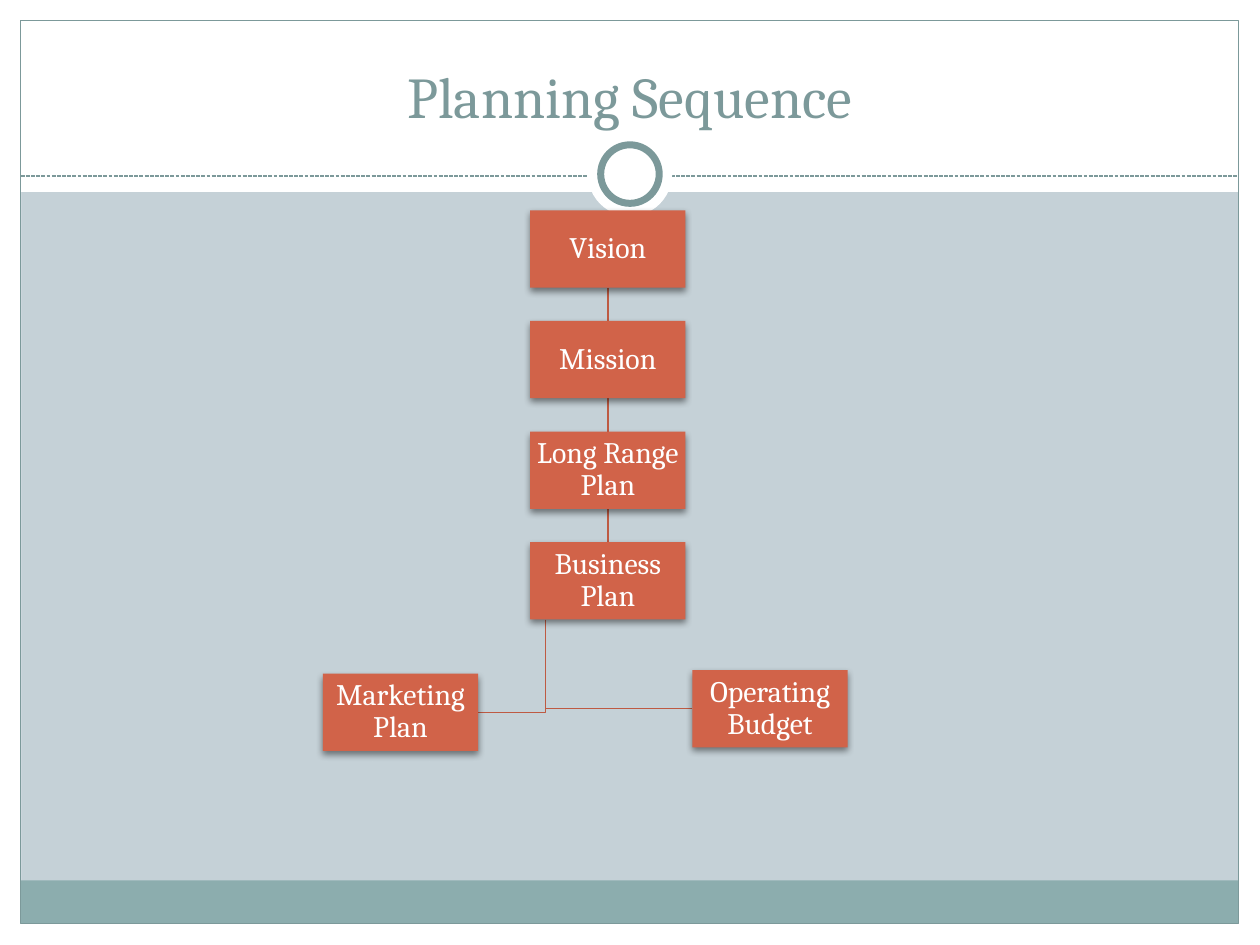
"""Build the Planning Sequence slide: a vertical chain of plans with two branches."""
from dataclasses import dataclass

from lxml import etree
from pptx import Presentation
from pptx.dml.color import RGBColor
from pptx.enum import dml, shapes, text
from pptx.oxml import ns
from pptx.util import Cm, Pt


@dataclass(frozen=True)
class Theme:
    backdrop: RGBColor = RGBColor(0xC5, 0xD1, 0xD7)
    paper: RGBColor = RGBColor(0xFF, 0xFF, 0xFF)
    band: RGBColor = RGBColor(0x8C, 0xAD, 0xAE)
    accent: RGBColor = RGBColor(0x7C, 0x99, 0x9A)
    box: RGBColor = RGBColor(0xD1, 0x63, 0x49)
    link: RGBColor = RGBColor(0xBE, 0x5A, 0x42)
    font: str = "Cambria"
    title_size: Pt = Pt(33)
    box_size: Pt = Pt(17)
    hairline: Pt = Pt(0.75)
    ring: Pt = Pt(4)


theme = Theme()
deck = Presentation()
deck.slide_width, deck.slide_height = Cm(25.4), Cm(19.05)
page = deck.slides.add_slide(deck.slide_layouts[5])
page.background.fill.solid()
page.background.fill.fore_color.rgb = theme.backdrop


def add_block(kind, bounds, fill=None, line=None, width=theme.hairline):
    block = page.shapes.add_shape(kind, *map(Cm, bounds))
    block.shadow.inherit = False
    if fill is None:
        block.fill.background()
    else:
        block.fill.solid()
        block.fill.fore_color.rgb = fill
    if line is None:
        block.line.fill.background()
    else:
        block.line.color.rgb = line
        block.line.width = width
    return block


def add_line(start, end, color):
    line = page.shapes.add_connector(shapes.MSO_CONNECTOR.STRAIGHT, *map(Cm, start + end))
    line.line.color.rgb = color
    line.line.width = theme.hairline
    etree.SubElement(line.element.spPr, ns.qn("a:effectLst"))
    return line


rectangle, oval = shapes.MSO_SHAPE.RECTANGLE, shapes.MSO_SHAPE.OVAL
for bounds in ((0, 18.62, 25.4, 0.43), (0, 0, 25.4, 3.87),
               (0, 0, 0.43, 19.05), (24.97, 0, 0.43, 19.05)):
    add_block(rectangle, bounds, theme.paper)
add_block(rectangle, (0.42, 17.75, 24.54, 0.87), theme.band)
add_block(rectangle, (0.42, 0.42, 24.55, 18.2), line=theme.accent)
divider = add_line((0.42, 3.55), (24.97, 3.55), theme.accent)
divider.line.dash_style = dml.MSO_LINE.SQUARE_DOT
add_block(oval, (11.85, 2.66, 1.7, 1.7), theme.paper)
ring = add_block(oval, (12.11, 2.92, 1.18, 1.18), theme.paper, theme.accent, theme.ring)

title = page.shapes.title
title.left, title.top, title.width, title.height = map(Cm, (0.85, 0.64, 23.7, 2.11))
ring.element.addnext(title.element)
title.text_frame.text = "Planning Sequence"
title.text_frame.auto_size = text.MSO_AUTO_SIZE.NONE
title.text_frame.vertical_anchor = text.MSO_ANCHOR.BOTTOM
para = title.text_frame.paragraphs[0]
para.alignment = text.PP_ALIGN.CENTER
span = para.runs[0]
span.font.name, span.font.size = theme.font, theme.title_size
span.font.color.rgb = theme.accent

box_width, box_height = 3.13, 1.56
chain_left, chain_top, pitch = 10.69, 4.24, 2.23
chain = ("Vision", "Mission", "Long Range Plan", "Business Plan")
chain_bottom = chain_top + (len(chain) - 1) * pitch + box_height
marketing_left, marketing_top = 6.51, 13.58
budget_left, budget_top = 13.96, 13.51

trunk = 11
for end_x, top in ((budget_left, budget_top), (marketing_left + box_width, marketing_top)):
    end_y = top + box_height / 2
    outline = page.shapes.build_freeform(Cm(trunk), Cm(chain_bottom))
    outline.add_line_segments([(Cm(trunk), Cm(end_y)), (Cm(end_x), Cm(end_y))], close=False)
    branch = outline.convert_to_shape()
    branch.shadow.inherit = False
    branch.fill.background()
    branch.line.color.rgb = theme.link
    branch.line.width = theme.hairline

plans = [(name, chain_left, chain_top + step * pitch) for step, name in enumerate(chain)]
plans += [("Marketing Plan", marketing_left, marketing_top),
          ("Operating Budget", budget_left, budget_top)]
boxes = []
for name, left, top in plans:
    box = add_block(rectangle, (left, top, box_width, box_height), theme.box)
    effects = box.element.spPr.find(ns.qn("a:effectLst"))
    shadow = etree.SubElement(effects, ns.qn("a:outerShdw"), blurRad=str(Pt(4)),
                              dist=str(Pt(2)), dir="5400000", rotWithShape="0")
    shade = etree.SubElement(shadow, ns.qn("a:srgbClr"), val="000000")
    etree.SubElement(shade, ns.qn("a:alpha"), val="45000")
    frame = box.text_frame
    frame.text = name
    frame.word_wrap = True
    frame.vertical_anchor = text.MSO_ANCHOR.MIDDLE
    frame.margin_left = frame.margin_right = frame.margin_top = frame.margin_bottom = Cm(0.03)
    para = frame.paragraphs[0]
    para.alignment = text.PP_ALIGN.CENTER
    para.line_spacing = 0.9
    span = para.runs[0]
    span.font.name, span.font.size = theme.font, theme.box_size
    span.font.color.rgb = theme.paper
    boxes.append(box)

chain_boxes = boxes[:len(chain)]
for upper, lower in zip(chain_boxes, chain_boxes[1:]):
    link = add_line((0, 0), (0, 0), theme.link)
    link.begin_connect(upper, 2)
    link.end_connect(lower, 0)
    boxes[0].element.addprevious(link.element)

deck.save("out.pptx")
